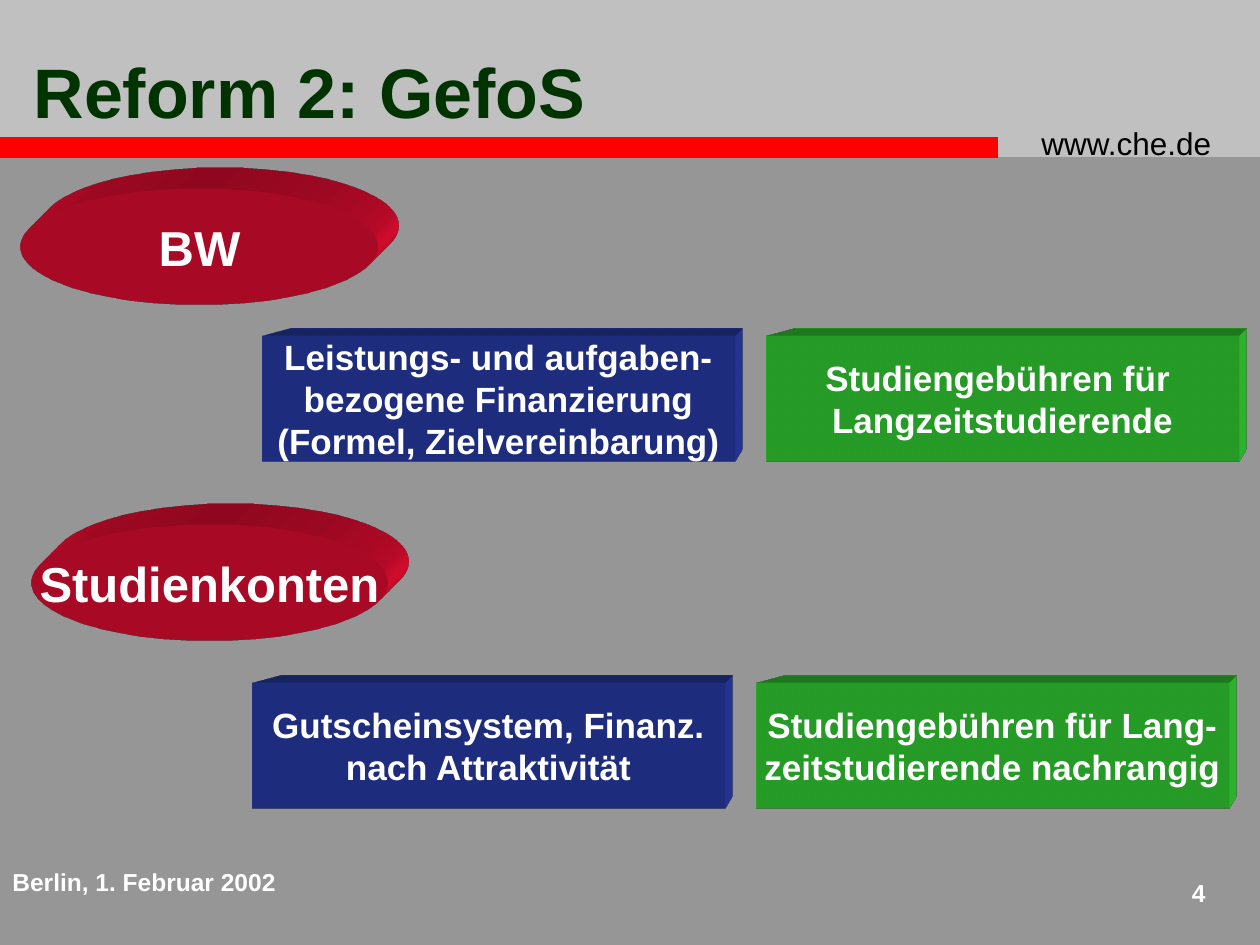
from lxml import etree
from pptx import Presentation
from pptx.dml.color import RGBColor
from pptx.enum.shapes import MSO_SHAPE
from pptx.enum.text import MSO_ANCHOR, PP_ALIGN
from pptx.oxml.ns import nsdecls
from pptx.util import Pt

PX = 914400 / 126
RECT, OVAL = MSO_SHAPE.RECTANGLE, MSO_SHAPE.OVAL
TOP, MIDDLE = MSO_ANCHOR.TOP, MSO_ANCHOR.MIDDLE
LEFT, CENTER, RIGHT = PP_ALIGN.LEFT, PP_ALIGN.CENTER, PP_ALIGN.RIGHT

TITLE = ("Reform 2: GefoS", (21, 42, 966, 97))
LABELS = [  # text, place, format, alignment
    ("www.che.de", (1029, 118, 221, 50), dict(size=18, color="000000", bold=False), LEFT),
    ("Berlin, 1. Februar 2002", (0, 861, 305, 63), dict(size=14), LEFT),
    ("4", (1145, 872, 73, 53), dict(size=14), RIGHT),
]
BANDS = [((0, 0, 1260, 157), "C0C0C0"), ((-1, 137, 999, 21), "FF0000")]

RED, BLUE, GREEN = "F00E34", "293BA5", "33CC33"
MODELS = [  # name, its ellipse corner, first block corner, block texts
    ("BW", (21, 189), (262, 336),
     ["Leistungs- und aufgaben-\nbezogene Finanzierung\n(Formel, Zielvereinbarung)",
      "Studiengebühren für \nLangzeitstudierende"]),
    ("Studienkonten", (31, 525), (252, 683),
     ["Gutscheinsystem, Finanz.\nnach Attraktivität",
      "Studiengebühren für Lang-\nzeitstudierende nachrangig"]),
]
ELLIPSE_SIZE, BLOCK_SIZE, BLOCK_STEP = (357, 116), (473, 126), 504
DEPTH = 430200  # EMU
OBLIQUE, PERSPECTIVE = "legacyObliqueTopRight", "legacyPerspectiveTopRight"


def rgb(value):
    return RGBColor.from_string(value)


def emu(box):
    return [round(v * PX) for v in box]


def write(sp, text, size, color="FFFFFF", bold=True, align=CENTER, anchor=MIDDLE, wrap=False):
    tf = sp.text_frame
    tf.word_wrap, tf.vertical_anchor = wrap, anchor
    tf.text = text
    font_format = dict(name="Arial", size=Pt(size), bold=bold)
    for p in tf.paragraphs:
        p.alignment = align
        for r in p.runs:
            for key, value in font_format.items():
                setattr(r.font, key, value)
            r.font.color.rgb = rgb(color)


def add_preset(shapes, kind, box, color):
    sp = shapes.add_shape(kind, *emu(box))
    sp.shadow.inherit = False
    sp.line.fill.background()
    sp.fill.solid()
    sp.fill.fore_color.rgb = rgb(color)
    return sp


def extrude(sp, camera, color):
    """Give the shape a body that runs back to the upper right."""
    scene = (f'<a:scene3d {nsdecls("a")}><a:camera prst="{camera}"/>'
             '<a:lightRig rig="legacyFlat3" dir="b"/></a:scene3d>')
    body = (f'<a:sp3d {nsdecls("a")} extrusionH="{DEPTH}" prstMaterial="legacyMatte">'
            '<a:bevelT w="13500" h="13500" prst="angle"/><a:bevelB w="13500" h="13500" prst="angle"/>'
            f'<a:extrusionClr><a:srgbClr val="{color}"/></a:extrusionClr></a:sp3d>')
    for xml in (scene, body):
        sp._element.spPr.append(etree.fromstring(xml))


def add_solid(shapes, kind, box, color, camera, text, size):
    sp = add_preset(shapes, kind, box, color)
    extrude(sp, camera, color)
    write(sp, text, size)


def main():
    prs = Presentation()
    prs.slide_width, prs.slide_height = emu((1260, 945))
    s = prs.slides.add_slide(prs.slide_layouts[5])
    s.background.fill.solid()
    s.background.fill.fore_color.rgb = rgb("969696")
    shapes = s.shapes

    for box, color in BANDS:
        add_preset(shapes, RECT, box, color)

    text, box = TITLE
    title = shapes.title
    title.left, title.top, title.width, title.height = emu(box)
    write(title, text, 40, "003300", align=LEFT, anchor=TOP, wrap=True)
    shapes._spTree.append(title._element)  # in front of the bands

    for text, box, text_format, align in LABELS:
        write(shapes.add_textbox(*emu(box)), text, align=align, anchor=TOP, wrap=True, **text_format)

    for name, corner, (x, y), texts in MODELS:
        add_solid(shapes, OVAL, corner + ELLIPSE_SIZE, RED, OBLIQUE, name, 28)
        for i, (text, color) in enumerate(zip(texts, (BLUE, GREEN))):
            box = (x + i * BLOCK_STEP, y) + BLOCK_SIZE
            add_solid(shapes, RECT, box, color, PERSPECTIVE, text, 20)

    prs.save("out.pptx")


if __name__ == "__main__":
    main()
